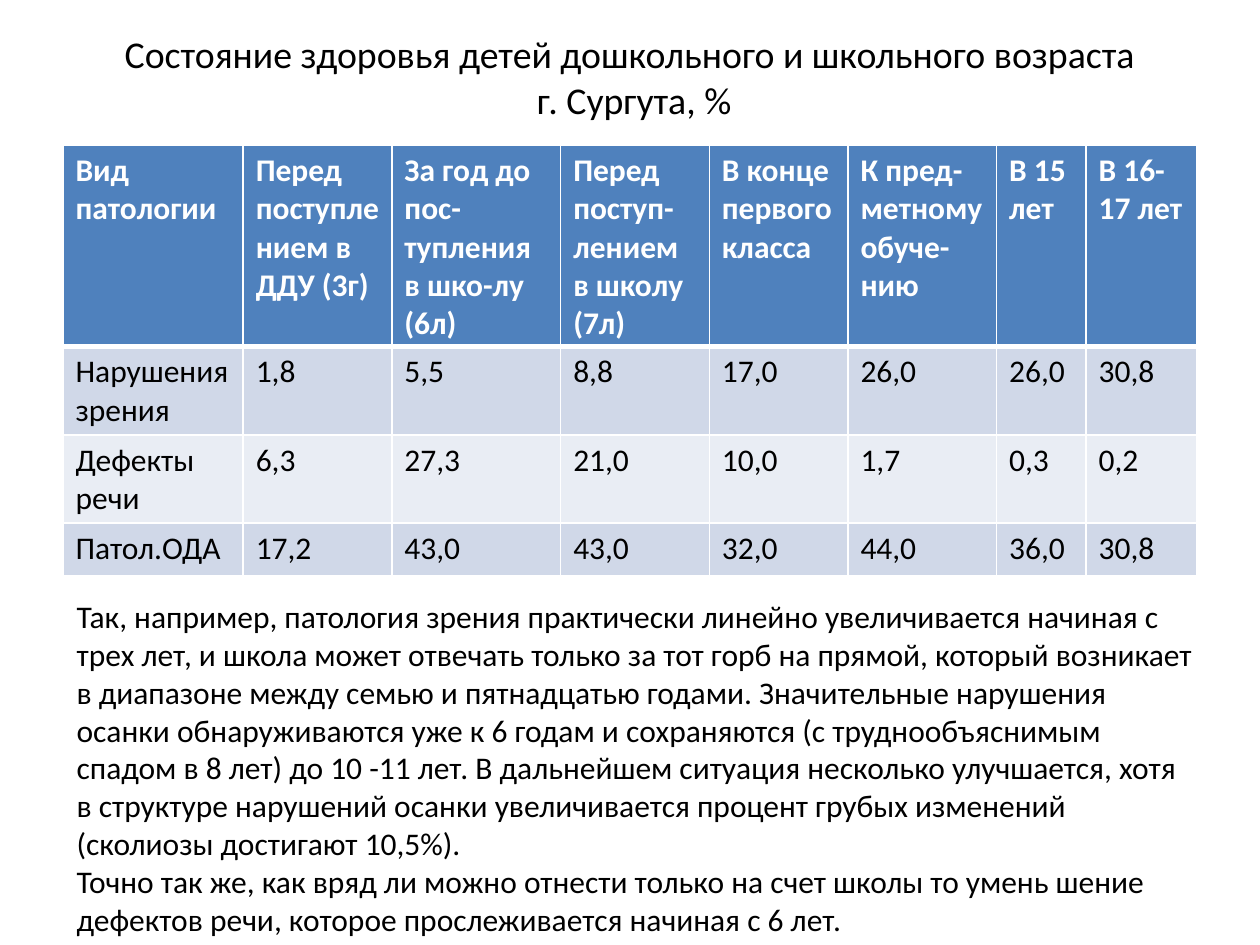
from pptx import Presentation
from pptx.dml.color import RGBColor
from pptx.enum.text import MSO_ANCHOR, PP_ALIGN
from pptx.oxml.ns import qn
from pptx.util import Inches, Pt
from lxml import etree

CENTER, LEFT = PP_ALIGN.CENTER, PP_ALIGN.LEFT
MIDDLE, TOP = MSO_ANCHOR.MIDDLE, MSO_ANCHOR.TOP
FONT = "Calibri"
COLORS = {
    "text": "000000",
    "white": "FFFFFF",
    "header": "4F81BD",
    "odd": "D0D8E8",
    "even": "E9EDF4",
}

TITLE = "Состояние здоровья детей дошкольного и школьного возраста\v г. Сургута, %"
COLUMN_WIDTHS = [1.43, 1.18, 1.34, 1.18, 1.1, 1.18, 0.71, 0.88]
ROW_HEIGHTS = [1.54, 0.67, 0.61, 0.42]
ROWS = [
    ["Вид\nпатологии", "Перед поступлением в ДДУ (3г)",
     "За год до пос-тупления в шко-лу (6л)", "Перед поступ-лением в школу\n(7л)",
     "В конце первого класса", "К пред-метному обуче-нию", "В 15 лет", "В 16-17 лет"],
    ["Нарушения зрения", "1,8", "5,5", "8,8", "17,0", "26,0", "26,0", "30,8"],
    ["Дефекты речи", "6,3", "27,3", "21,0", "10,0", "1,7", "0,3", "0,2"],
    ["Патол.ОДА", "17,2", "43,0", "43,0", "32,0", "44,0", "36,0", "30,8"],
]
COMMENTARY = (
    "Так, например, патология зрения практически линейно увеличивается начиная с трех лет, "
    "и школа может отвечать только за тот горб на прямой, который возникает в диапазоне "
    "между семью и пятнадцатью годами. Значительные нарушения осанки обнаруживаются уже "
    "к 6 годам и сохраняются (с труднообъяснимым спадом в 8 лет) до 10 -11 лет. "
    "В дальнейшем ситуация несколько улучшается, хотя в структуре нарушений осанки "
    "увеличивается процент грубых изменений (сколиозы достигают 10,5%).\n"
    "Точно так же, как вряд ли можно отнести только на счет школы то умень шение "
    "дефектов речи, которое прослеживается начиная с 6 лет."
)


def rgb(name):
    return RGBColor.from_string(COLORS[name])


def write_text(tf, text, size, color="text", bold=False, align=LEFT):
    tf.text = text
    for p in tf.paragraphs:
        p.alignment = align
        p.font.name = FONT
        p.font.size = Pt(size)
        p.font.bold = bold
        p.font.color.rgb = rgb(color)


def add_text(s, box, text, size, align=LEFT, anchor=TOP):
    tf = s.shapes.add_textbox(*map(Inches, box)).text_frame
    tf.word_wrap = True
    tf.vertical_anchor = anchor
    write_text(tf, text, size, align=align)


def set_borders(cell, widths):
    tcPr = cell._tc.get_or_add_tcPr()
    for i, (side, width) in enumerate(widths.items()):
        ln = etree.Element(qn(f"a:{side}"), w=str(Pt(width)))
        fill = etree.SubElement(ln, qn("a:solidFill"))
        etree.SubElement(fill, qn("a:srgbClr"), val=COLORS["white"])
        tcPr.insert(i, ln)


def add_health_table(s):
    shape = s.shapes.add_table(len(ROWS), len(COLUMN_WIDTHS), Inches(0.5), Inches(1.15),
                               Inches(sum(COLUMN_WIDTHS)), Inches(sum(ROW_HEIGHTS)))
    table = shape.table
    for column, width in zip(table.columns, COLUMN_WIDTHS):
        column.width = Inches(width)
    for i, (row, height, texts) in enumerate(zip(table.rows, ROW_HEIGHTS, ROWS)):
        row.height = Inches(height)
        header = i == 0
        fill = "header" if header else "odd" if i % 2 else "even"
        widths = {"lnL": 1, "lnR": 1, "lnT": 3 if i == 1 else 1, "lnB": 3 if header else 1}
        for cell, text in zip(row.cells, texts):
            cell.fill.solid()
            cell.fill.fore_color.rgb = rgb(fill)
            write_text(cell.text_frame, text, 18, "white" if header else "text", header)
            set_borders(cell, widths)


def main():
    prs = Presentation()
    prs.slide_width, prs.slide_height = Inches(10), Inches(7.5)
    s = prs.slides.add_slide(prs.slide_layouts[6])
    add_text(s, (0.5, 0.3, 9, 0.61), TITLE, 21.6, CENTER, MIDDLE)
    add_health_table(s)
    add_text(s, (0.51, 4.69, 9.06, 2.83), COMMENTARY, 18)
    prs.save("out.pptx")


if __name__ == "__main__":
    main()
